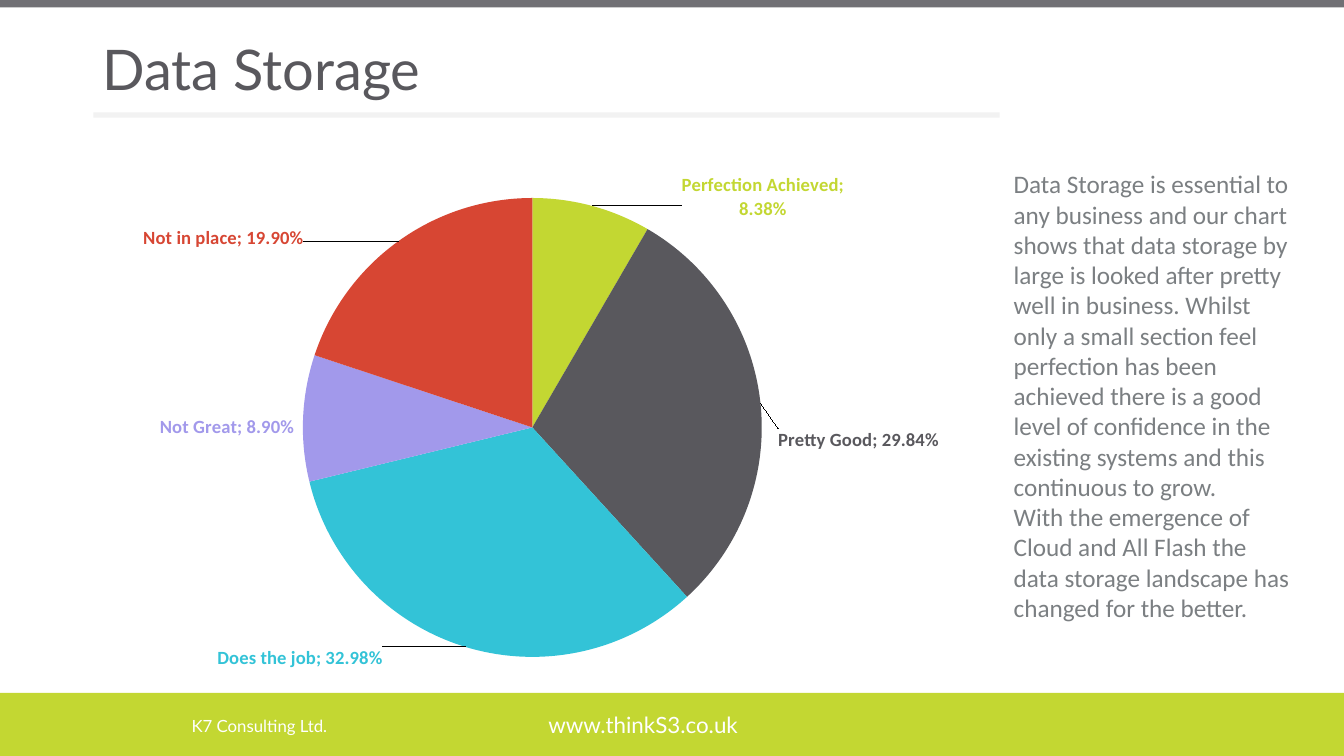
"""Build the Data Storage survey slide."""
from dataclasses import dataclass

import pptx
import pptx.chart.data
import pptx.dml.color
import pptx.enum.chart
import pptx.enum.shapes
import pptx.enum.text
import pptx.oxml
import pptx.oxml.ns
import pptx.util

PX = 9525
ALIGN = pptx.enum.text.PP_ALIGN
ANCHOR = pptx.enum.text.MSO_ANCHOR
AUTO = pptx.enum.text.MSO_AUTO_SIZE
CHART_W, CHART_H = 864, 533
PERCENT = "0.00%"


@dataclass(frozen=True)
class Theme:
    """Colours, fonts and type sizes of the slide."""

    lime: str = "C3D732"
    charcoal: str = "59585D"
    cyan: str = "33C3D7"
    lilac: str = "A299EB"
    red: str = "D74633"
    grey: str = "7B7F82"
    rule: str = "F2F2F2"
    white: str = "FFFFFF"
    heading_font: str = "Lato"
    body_font: str = "Calibri"
    title: float = 40
    body: float = 18
    website: float = 16
    company: float = 12
    label: float = 13.3
    chart: float = 10


THEME = Theme()

ANSWERS = [
    ("Perfection Achieved", 0.0838, THEME.lime, (84, 19)),
    ("Pretty Good", 0.2984, THEME.charcoal, (11, 47)),
    ("Does the job", 0.3298, THEME.cyan, (-77, -6)),
    ("Not Great", 0.0890, THEME.lilac, (-3, 9)),
    ("Not in place", 0.1990, THEME.red, (-86, 13)),
]

COMMENTARY = [
    "Data Storage is essential to any business and our chart shows that data "
    "storage by large is looked after pretty well in business. Whilst only a "
    "small section feel perfection has been achieved there is a good level of "
    "confidence in the existing systems and this continuous to grow.",
    "With the emergence of Cloud and All Flash the data storage landscape has "
    "changed for the better.",
]


def px(*lengths):
    """Turn pixel lengths into EMU."""
    return [pptx.util.Emu(n * PX) for n in lengths]


def rgb(colour):
    """Turn a hex string into a colour."""
    return pptx.dml.color.RGBColor.from_string(colour)


def chart_xml(tag, attributes="", body=""):
    """Make a chart element from its tag, attributes and inner markup."""
    names = pptx.oxml.ns.nsdecls("c")
    return pptx.oxml.parse_xml(f"<c:{tag} {names} {attributes}>{body}</c:{tag}>")


def set_font(font, name, size, colour, bold=None):
    """Apply face, size and colour to a font."""
    font.name = name
    font.size = pptx.util.Pt(size)
    font.bold = bold
    font.color.rgb = rgb(colour)


def add_bar(s, box, colour, opacity=100):
    """Add a plain filled rectangle."""
    sp = s.shapes.add_shape(pptx.enum.shapes.MSO_SHAPE.RECTANGLE, *px(*box))
    sp.shadow.inherit = False
    sp.fill.solid()
    sp.fill.fore_color.rgb = rgb(colour)
    sp.line.fill.background()
    if opacity < 100:
        clr = sp._element.spPr.find(".//" + pptx.oxml.ns.qn("a:srgbClr"))
        clr.append(pptx.oxml.parse_xml(
            f'<a:alpha {pptx.oxml.ns.nsdecls("a")} val="{opacity * 1000}"/>'))


def add_text(s, box, lines, font, size, colour, align=ALIGN.LEFT,
             anchor=ANCHOR.MIDDLE, auto_size=AUTO.NONE):
    """Add a wrapped text box with one paragraph per line."""
    tf = s.shapes.add_textbox(*px(*box)).text_frame
    tf.word_wrap = True
    tf.auto_size = auto_size
    tf.vertical_anchor = anchor
    tf.text = "\n".join(lines)
    for p in tf.paragraphs:
        p.alignment = align
        set_font(p.font, font, size, colour)


def set_title(s, box, text):
    """Place and format the title placeholder."""
    sp = s.shapes.title
    sp.left, sp.top, sp.width, sp.height = px(*box)
    tf = sp.text_frame
    tf.text = text
    tf.auto_size = AUTO.NONE
    tf.vertical_anchor = ANCHOR.MIDDLE
    p = tf.paragraphs[0]
    p.alignment = ALIGN.LEFT
    p.line_spacing = 0.9
    set_font(p.font, THEME.heading_font, THEME.title, THEME.charcoal)


def place_plot(chart, x, y, w, h):
    """Fix the inner plot area, in fractions of the chart."""
    area = chart._chartSpace.chart.plotArea
    for old in area.findall(pptx.oxml.ns.qn("c:layout")):
        area.remove(old)
    area.insert(0, chart_xml("layout", body=(
        '<c:manualLayout><c:layoutTarget val="inner"/>'
        '<c:xMode val="edge"/><c:yMode val="edge"/>'
        f'<c:x val="{x}"/><c:y val="{y}"/><c:w val="{w}"/><c:h val="{h}"/>'
        '</c:manualLayout>')))


def format_slice(series, index, colour, shift):
    """Colour one slice and its label, and shift the label by pixels."""
    point = series.points[index]
    point.format.fill.solid()
    point.format.fill.fore_color.rgb = rgb(colour)
    label = point.data_label
    set_font(label.font, THEME.body_font, THEME.label, colour, bold=True)
    label.position = pptx.enum.chart.XL_LABEL_POSITION.OUTSIDE_END
    node = series._element.xpath(f"c:dLbls/c:dLbl[c:idx/@val='{index}']")[0]
    node.find(pptx.oxml.ns.qn("c:showCatName")).set("val", "1")
    dx, dy = shift
    node.insert(1, chart_xml("layout", body=(
        f'<c:manualLayout><c:x val="{dx / CHART_W:.3f}"/>'
        f'<c:y val="{dy / CHART_H:.3f}"/></c:manualLayout>')))
    node.insert(2, chart_xml(
        "numFmt", f'formatCode="{PERCENT}" sourceLinked="0"'))


def add_pie(s, left, top):
    """Add the pie of survey answers."""
    data = pptx.chart.data.CategoryChartData(number_format=PERCENT)
    data.categories = [name for name, *_ in ANSWERS]
    data.add_series("Series 1", [value for _, value, *_ in ANSWERS])
    chart = s.shapes.add_chart(pptx.enum.chart.XL_CHART_TYPE.PIE,
                               *px(left, top, CHART_W, CHART_H), data).chart
    chart.has_title = False
    chart.has_legend = False
    set_font(chart.font, THEME.body_font, THEME.chart, THEME.grey)
    chart.plots[0].vary_by_categories = True
    place_plot(chart, 0.23, 0.11, 0.51, 0.82)
    series = chart.plots[0].series[0]
    labels = series.data_labels
    labels.show_value = True
    labels.show_category_name = True
    labels.number_format = PERCENT
    labels.number_format_is_linked = False
    for index, (_, _, colour, shift) in enumerate(ANSWERS):
        format_slice(series, index, colour, shift)


def main():
    """Build and save the slide."""
    prs = pptx.Presentation()
    prs.slide_width, prs.slide_height = px(1280, 720)
    s = prs.slides.add_slide(prs.slide_layouts[5])
    add_bar(s, (0, 660, 1280, 60), THEME.lime)
    add_bar(s, (0, 0, 1280, 7), THEME.charcoal, opacity=85)
    add_bar(s, (89, 107, 863, 5), THEME.rule)
    add_text(s, (494, 671, 237, 38), ["www.thinkS3.co.uk"],
             THEME.heading_font, THEME.website, THEME.white, ALIGN.CENTER)
    add_text(s, (173, 672, 237, 38), ["K7 Consulting Ltd."],
             THEME.heading_font, THEME.company, THEME.white)
    set_title(s, (88, 38, 948, 61), "Data Storage")
    add_pie(s, 88, 130)
    add_text(s, (956, 156, 283, 445), COMMENTARY, THEME.body_font, THEME.body,
             THEME.grey, anchor=ANCHOR.TOP, auto_size=AUTO.SHAPE_TO_FIT_TEXT)
    prs.save("out.pptx")


if __name__ == "__main__":
    main()
